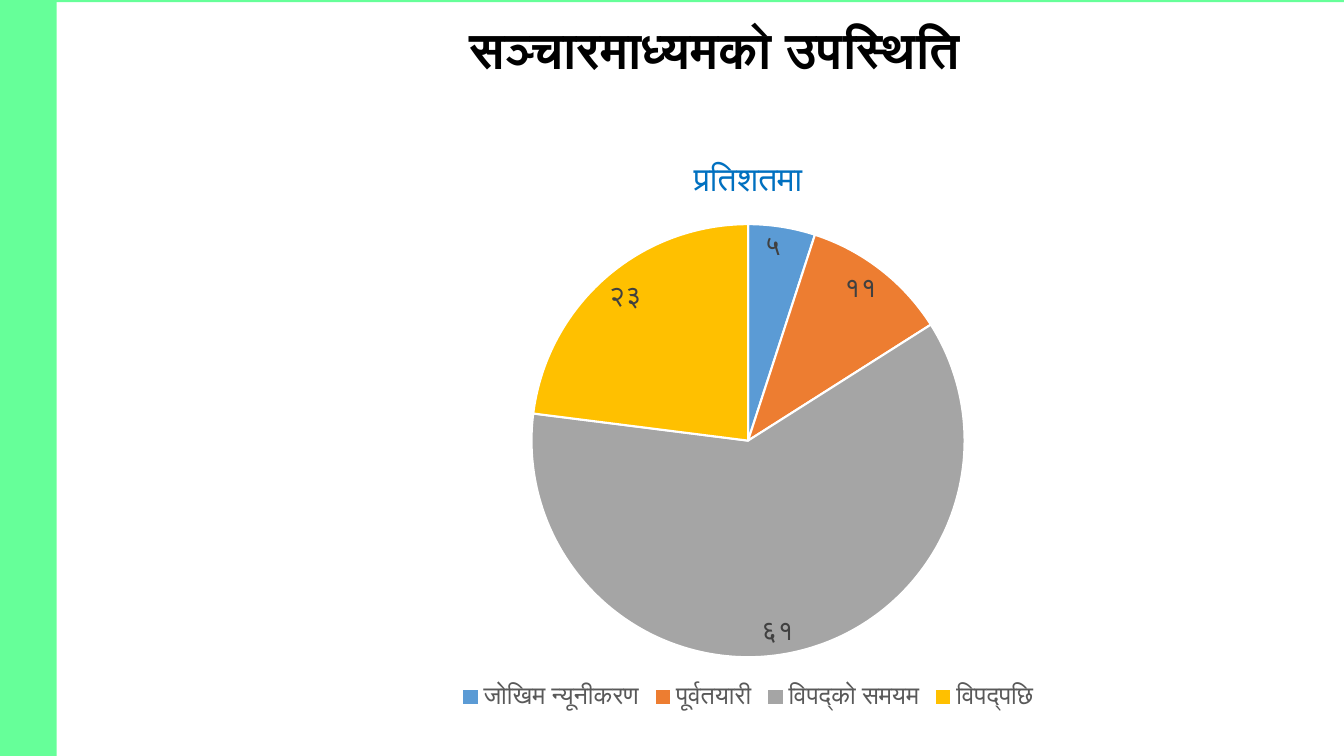
"""Build the slide on media presence, with one pie chart in percent."""
from lxml.etree import SubElement
from pptx import Presentation
from pptx.chart.data import CategoryChartData
from pptx.dml.color import RGBColor
from pptx.enum.chart import XL_CHART_TYPE, XL_LABEL_POSITION, XL_LEGEND_POSITION
from pptx.enum.text import MSO_ANCHOR, PP_ALIGN
from pptx.oxml.ns import qn
from pptx.util import Pt

PX = 9525
SLIDE_SIZE = (1280, 720)
GREEN = "66FF99"
BANDS = [(0, 0, 54, 720), (0, 0, 1280, 2)]
HEADING = "सञ्चारमाध्यमको उपस्थिति"
HEADING_BOX = (170, 14, 1022, 72)
CHART_TITLE = "प्रतिशतमा"
CHART_BOX = (280, 131, 865, 550)
PIE_AREA = {"x": 0.26, "y": 0.15, "w": 0.48, "h": 0.75}
NEPALI_DIGITS = "[$-4000439]0"
SHARES = [
    ("जोखिम न्यूनीकरण", 5, "5B9BD5"),
    ("पूर्वतयारी", 11, "ED7D31"),
    ("विपद्को समयम", 61, "A5A5A5"),
    ("विपद्पछि", 23, "FFC000"),
]


def emu(box):
    return [length * PX for length in box]


def rgb(value):
    return RGBColor.from_string(value)


def style(font, name, size, color, bold=False):
    font.name, font.size, font.bold = name, Pt(size), bold
    font.color.rgb = rgb(color)


def add_bands(slide):
    for box in BANDS:
        band = slide.shapes.add_shape(1, *emu(box))
        band.shadow.inherit = False
        band.fill.solid()
        band.fill.fore_color.rgb = rgb(GREEN)
        band.line.fill.background()


def add_heading(slide):
    frame = slide.shapes.add_textbox(*emu(HEADING_BOX)).text_frame
    frame.word_wrap = True
    frame.vertical_anchor = MSO_ANCHOR.MIDDLE
    heading = frame.paragraphs[0]
    heading.text = HEADING
    heading.alignment = PP_ALIGN.CENTER
    heading.line_spacing = 0.9
    style(heading.font, "Lato", 36, "000000", bold=True)


def place_pie(plot_area):
    layout = plot_area.find(qn("c:layout"))
    if layout is None:
        layout = SubElement(plot_area, qn("c:layout"))
        plot_area.insert(0, layout)
    manual = SubElement(layout, qn("c:manualLayout"))
    settings = {"layoutTarget": "inner", "xMode": "edge", "yMode": "edge", **PIE_AREA}
    for tag, value in settings.items():
        SubElement(manual, qn(f"c:{tag}")).set("val", str(value))


def add_pie(slide):
    names, values, colors = zip(*SHARES)
    data = CategoryChartData()
    data.categories = names
    data.add_series("Series 1", values)
    chart = slide.shapes.add_chart(XL_CHART_TYPE.PIE, *emu(CHART_BOX), data).chart
    style(chart.font, "Calibri", 10, "000000")

    chart.has_title = True
    chart.chart_title.include_in_layout = False
    title = chart.chart_title.text_frame.paragraphs[0]
    title.text = CHART_TITLE
    style(title.font, "Calibri", 24, "0070C0")

    chart.has_legend = True
    chart.legend.position = XL_LEGEND_POSITION.BOTTOM
    chart.legend.include_in_layout = False
    style(chart.legend.font, "Calibri", 18, "595959")

    pie = chart.plots[0]
    pie.vary_by_categories = True
    for index, color in enumerate(colors):
        wedge = pie.series[0].points[index].format
        wedge.fill.solid()
        wedge.fill.fore_color.rgb = rgb(color)
        wedge.line.color.rgb = rgb("FFFFFF")
        wedge.line.width = Pt(1.5)

    labels = pie.series[0].data_labels
    labels.show_value = True
    labels.number_format = NEPALI_DIGITS
    labels.number_format_is_linked = False
    labels.position = XL_LABEL_POSITION.INSIDE_END
    style(labels.font, "Calibri", 20, "404040")
    place_pie(chart.element.find(".//" + qn("c:plotArea")))


def main():
    deck = Presentation()
    deck.slide_width, deck.slide_height = emu(SLIDE_SIZE)
    slide = deck.slides.add_slide(deck.slide_layouts[6])
    add_bands(slide)
    add_heading(slide)
    add_pie(slide)
    deck.save("out.pptx")


if __name__ == "__main__":
    main()
